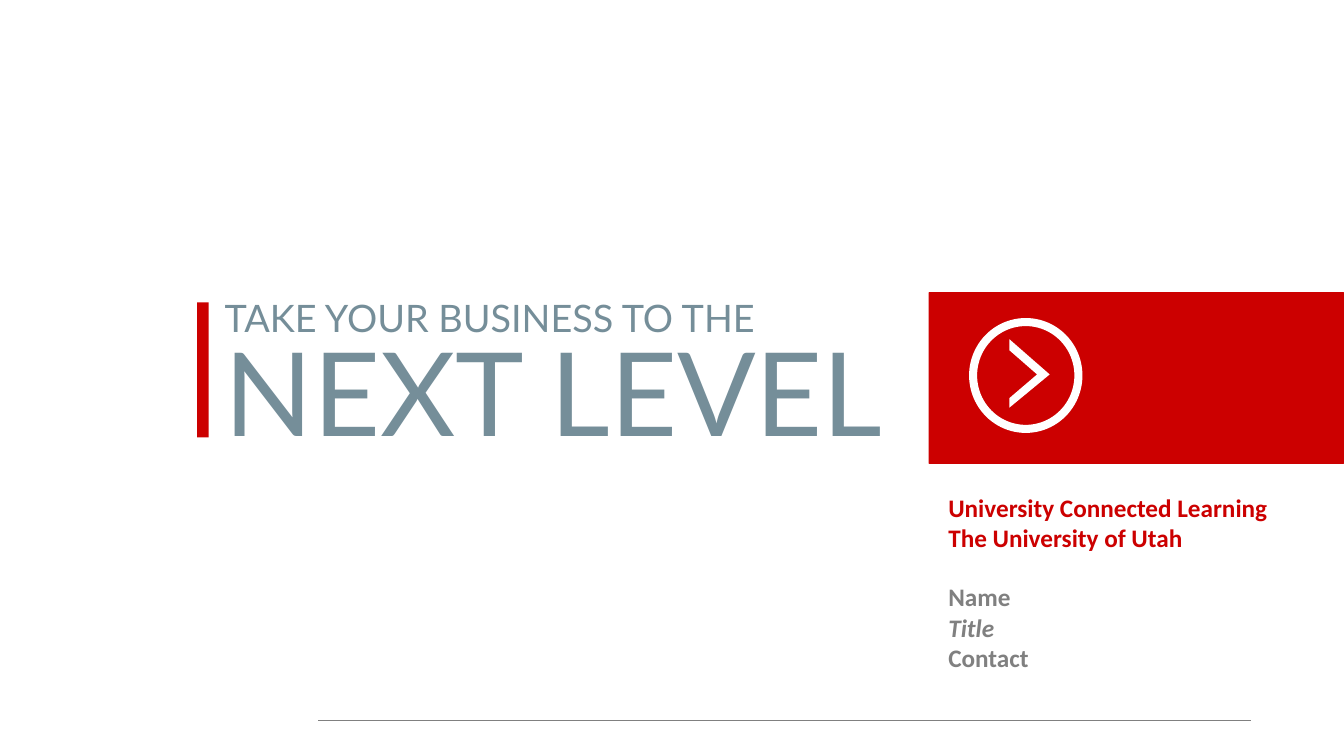
"""Build the opening slide of a business learning presentation."""
from dataclasses import dataclass

from lxml import etree
from pptx import Presentation
from pptx import util as u
from pptx.dml.color import RGBColor
from pptx.enum import shapes, text
from pptx.oxml.ns import qn


@dataclass(frozen=True)
class Theme:
    """Colours, type sizes and fonts."""
    red: str = "CC0000"
    slate: str = "758E99"
    grey: str = "808080"
    white: str = "FFFFFF"
    headline_size: int = 166
    lead_size: int = 54
    detail_size: int = 36
    display_font: str = "Lato"
    detail_font: str = "Calibri"


class SlideBuilder:
    """Draw styled elements on one slide."""

    def __init__(self, slide, theme):
        """Keep the slide and its theme."""
        self.slide = slide
        self.theme = theme

    def paint(self, shape, fill, line=None):
        """Apply a flat fill and an optional thin outline."""
        shape.shadow.inherit = False
        shape.fill.solid()
        shape.fill.fore_color.rgb = RGBColor.from_string(fill)
        if line:
            shape.line.color.rgb = RGBColor.from_string(line)
            shape.line.width = u.Pt(0.5)
        else:
            shape.line.fill.background()

    def rectangle(self, box, fill, line=None):
        """Add a filled rectangle."""
        shape = self.slide.shapes.add_shape(
            shapes.MSO_SHAPE.RECTANGLE, *map(u.Inches, box))
        self.paint(shape, fill, line)

    def rule(self, start, end, color):
        """Add a thin straight line."""
        connector = self.slide.shapes.add_connector(
            shapes.MSO_CONNECTOR.STRAIGHT, *map(u.Inches, start + end))
        connector.line.color.rgb = RGBColor.from_string(color)
        connector.line.width = u.Pt(1)
        properties = connector._element.find(qn("p:spPr"))
        etree.SubElement(properties, qn("a:effectLst"))

    def arrow_badge(self, box, band, chevron_points):
        """Add a ring and a chevron as one group."""
        group = self.slide.shapes.add_group_shape()
        ring = group.shapes.add_shape(
            shapes.MSO_SHAPE.DONUT, *map(u.Inches, box))
        ring.adjustments[0] = band / min(box[2:])
        points = [tuple(map(u.Inches, point)) for point in chevron_points]
        builder = group.shapes.build_freeform(*points[0])
        builder.add_line_segments(points[1:], close=True)
        for shape in (ring, builder.convert_to_shape()):
            self.paint(shape, self.theme.white)

    def text_box(self, box, lines, font, wrap=True):
        """Add paragraphs given as (words, extra font values) pairs."""
        shape = self.slide.shapes.add_textbox(*map(u.Inches, box))
        frame = shape.text_frame
        frame.word_wrap = wrap
        frame.auto_size = text.MSO_AUTO_SIZE.SHAPE_TO_FIT_TEXT
        for index, (words, extra) in enumerate(lines):
            paragraph = frame.add_paragraph() if index else frame.paragraphs[0]
            paragraph.text = words
            values = {**font, **extra}
            color = RGBColor.from_string(values.pop("color"))
            for run in paragraph.runs:
                for name, value in values.items():
                    setattr(run.font, name, value)
                run.font.color.rgb = color


def main():
    """Compose and save the slide."""
    theme = Theme()
    presentation = Presentation()
    presentation.slide_width = u.Inches(26.67)
    presentation.slide_height = u.Inches(15)
    slide = presentation.slides.add_slide(presentation.slide_layouts[6])
    builder = SlideBuilder(slide, theme)

    display = {"name": theme.display_font, "color": theme.slate}
    detail = {"name": theme.detail_font, "size": u.Pt(theme.detail_size),
              "bold": True}

    builder.rule((6.32, 14.3), (24.83, 14.3), theme.grey)
    builder.rectangle((18.43, 5.8, 8.23, 3.4), theme.red, theme.red)
    builder.text_box((4.36, 6.31, 13.67, 2.89), [("NEXT LEVEL", {})],
                     {**display, "size": u.Pt(theme.headline_size)}, wrap=False)
    builder.text_box((4.36, 5.8, 18.38, 1.01),
                     [("TAKE YOUR BUSINESS TO THE", {})],
                     {**display, "size": u.Pt(theme.lead_size)})
    builder.rectangle((3.91, 6, 0.23, 2.68), theme.red)
    builder.arrow_badge(
        (19.23, 6.31, 2.25, 2.28), 0.16,
        [(20.03, 7.9), (20.58, 7.43), (20.03, 6.95),
         (20.03, 6.73), (20.83, 7.43), (20.03, 8.09)])
    builder.text_box(
        (18.72, 9.71, 7.94, 1.31),
        [("University Connected Learning\vThe University of Utah", {})],
        {**detail, "color": theme.red})
    builder.text_box(
        (18.72, 11.49, 13.33, 1.92),
        [("Name", {}), ("Title", {"italic": True}), ("Contact", {})],
        {**detail, "color": theme.grey})

    presentation.save("out.pptx")


if __name__ == "__main__":
    main()
